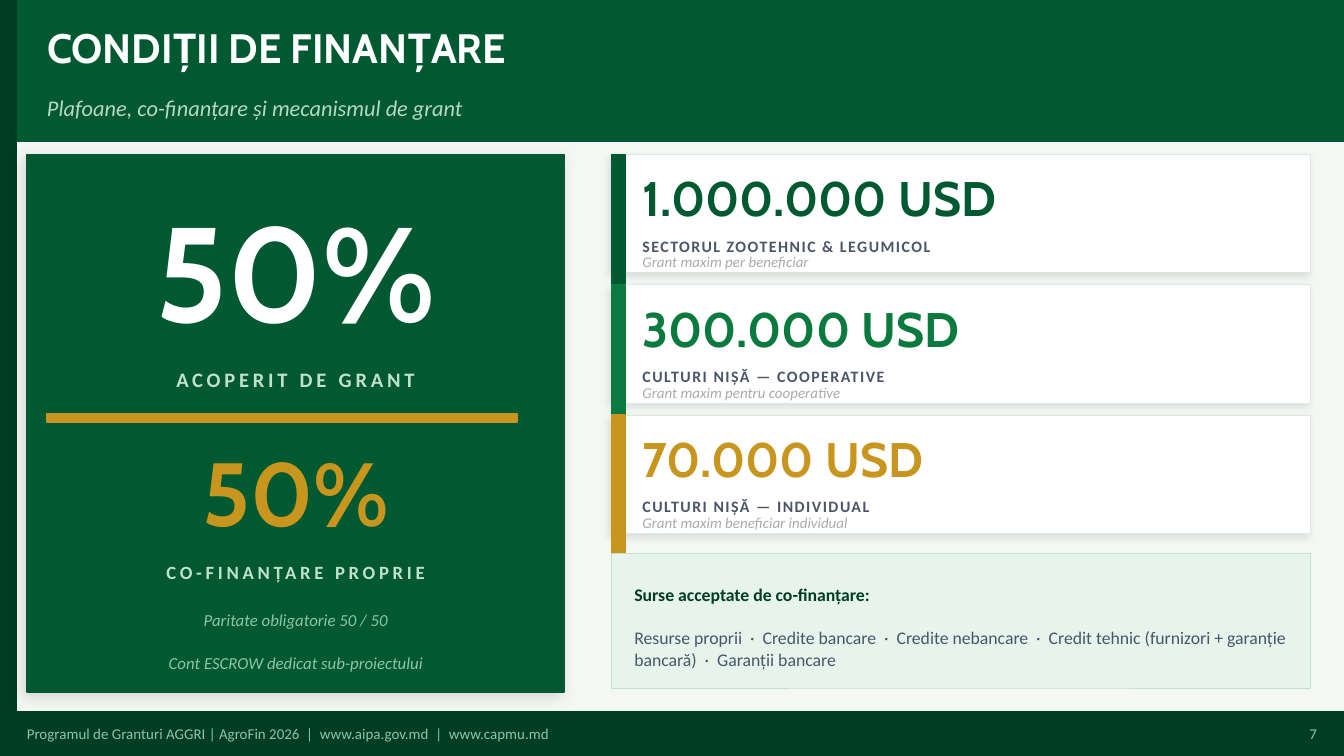
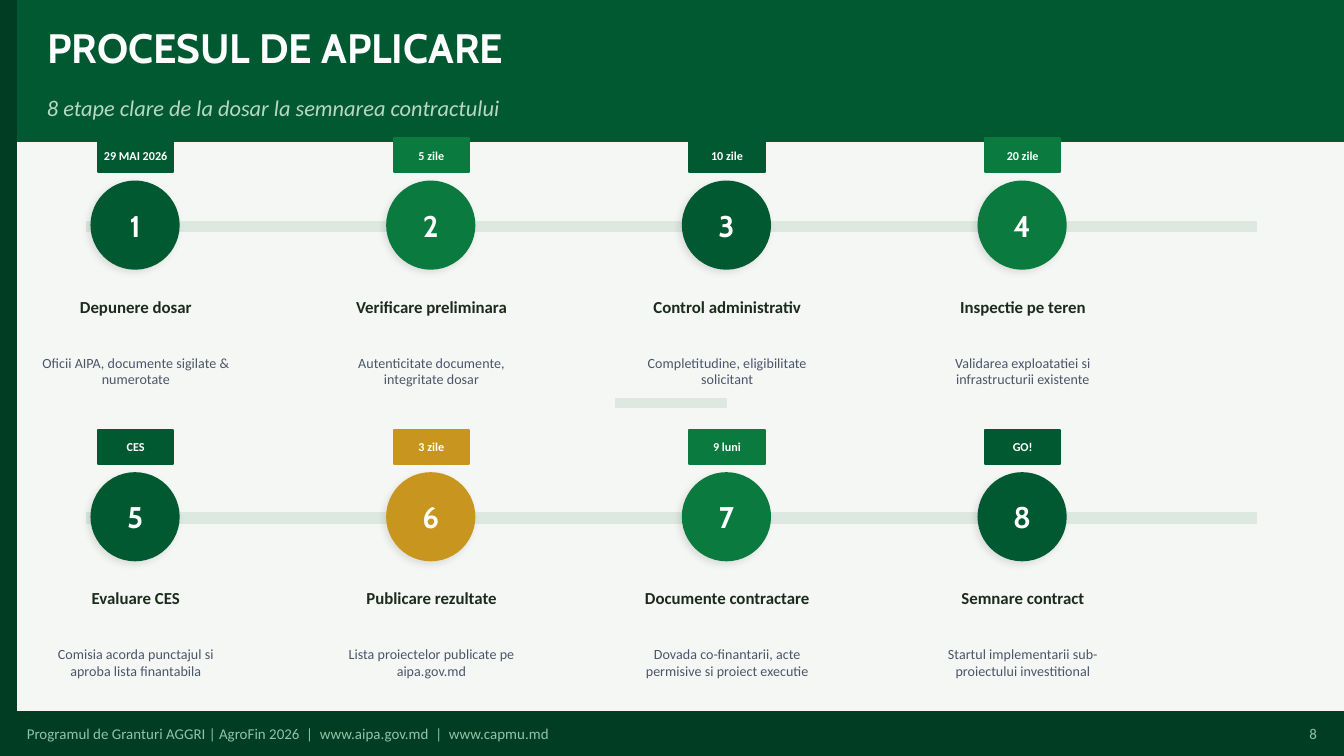
from lxml import etree
from pptx import Presentation
from pptx.dml.color import RGBColor
from pptx.enum.shapes import MSO_SHAPE
from pptx.enum.text import MSO_ANCHOR, MSO_AUTO_SIZE, PP_ALIGN
from pptx.oxml.ns import qn
from pptx.util import Inches, Pt

RECT, OVAL = MSO_SHAPE.RECTANGLE, MSO_SHAPE.OVAL
LEFT, CENTER, RIGHT = PP_ALIGN.LEFT, PP_ALIGN.CENTER, PP_ALIGN.RIGHT
MIDDLE = MSO_ANCHOR.MIDDLE
NO_AUTOFIT = MSO_AUTO_SIZE.NONE

# Shared palette and fonts
GREEN, DARK, LEAF, GOLD = "005931", "003D22", "0A7A3E", "C8961E"
WHITE, PAPER, TRACK, MINT = "FFFFFF", "F4F7F4", "DDE8E0", "C2E0CE"
PALE, SAGE, SLATE, GREY, INK = "B8D8C2", "90C4A8", "4A5568", "AAAAAA", "1C2B1C"
HEAD, BODY = "Cabin", "Calibri"

SLIDE_W = 10
SLIDE_H = SLIDE_W * 9 / 16
TITLE_ONLY = 5
FOOTER = "Programul de Granturi AGGRI | AgroFin 2026  |  www.aipa.gov.md  |  www.capmu.md"

CARDS = [
    ("1.000.000 USD", "SECTORUL ZOOTEHNIC & LEGUMICOL", "Grant maxim per beneficiar", GREEN),
    ("300.000 USD", "CULTURI NIȘĂ — COOPERATIVE", "Grant maxim pentru cooperative", LEAF),
    ("70.000 USD", "CULTURI NIȘĂ — INDIVIDUAL", "Grant maxim beneficiar individual", GOLD),
]
SOURCES = ("Resurse proprii  ·  Credite bancare  ·  Credite nebancare  ·  "
           "Credit tehnic (furnizori + garanție bancară)  ·  Garanții bancare")
STEPS = [
    ("29 MAI 2026", "Depunere dosar", "Oficii AIPA, documente sigilate & numerotate", GREEN),
    ("5 zile", "Verificare preliminara", "Autenticitate documente, integritate dosar", LEAF),
    ("10 zile", "Control administrativ", "Completitudine, eligibilitate solicitant", GREEN),
    ("20 zile", "Inspectie pe teren", "Validarea exploatatiei si infrastructurii existente", LEAF),
    ("CES", "Evaluare CES", "Comisia acorda punctajul si aproba lista finantabila", GREEN),
    ("3 zile", "Publicare rezultate", "Lista proiectelor publicate pe aipa.gov.md", GOLD),
    ("9 luni", "Documente contractare",
     "Dovada co-finantarii, acte permisive si proiect executie", LEAF),
    ("GO!", "Semnare contract", "Startul implementarii sub-proiectului investitional", GREEN),
]
STEPS_PER_ROW = 4


def rgb(color):
    return RGBColor.from_string(color)


def write(sp, text, size, color, font=BODY, bold=False, italic=False,
          align=LEFT, spacing=0):
    """Fill a shape with one paragraph, centred vertically and without insets."""
    tf = sp.text_frame
    tf.word_wrap = True
    tf.auto_size = NO_AUTOFIT
    tf.vertical_anchor = MIDDLE
    tf.margin_left = tf.margin_top = tf.margin_right = tf.margin_bottom = 0
    p = tf.paragraphs[0]
    p.text = text
    p.alignment = align
    f = p.font
    f.name, f.size, f.bold, f.italic = font, Pt(size), bold, italic
    f.color.rgb = rgb(color)
    if spacing:
        f._rPr.set("spc", str(round(spacing * 100)))


def add_text(s, x, y, w, h, text, size, color, **style):
    sp = s.shapes.add_textbox(Inches(x), Inches(y), Inches(w), Inches(h))
    write(sp, text, size, color, **style)


def add_block(s, x, y, w, h, fill, line=None, line_width=1, kind=RECT):
    sp = s.shapes.add_shape(kind, Inches(x), Inches(y), Inches(w), Inches(h))
    sp.shadow.inherit = False
    sp.fill.solid()
    sp.fill.fore_color.rgb = rgb(fill)
    sp.line.color.rgb = rgb(line or fill)
    sp.line.width = Pt(line_width)
    return sp


def cast_shadow(sp, opacity, blur, distance):
    """Soft black shadow towards the lower left."""
    effects = sp.element.spPr.find(qn("a:effectLst"))
    shadow = etree.SubElement(effects, qn("a:outerShdw"), blurRad=str(Pt(blur)),
                              dist=str(Pt(distance)), dir=str(135 * 60000),
                              algn="bl", rotWithShape="0")
    black = etree.SubElement(shadow, qn("a:srgbClr"), val="000000")
    etree.SubElement(black, qn("a:alpha"), val=str(opacity * 1000))


def add_slide(prs, number, title, subtitle):
    s = prs.slides.add_slide(prs.slide_layouts[TITLE_ONLY])
    # Header
    add_block(s, 0, 0, SLIDE_W, 1.05, GREEN)
    add_block(s, 0, 0, 0.12, SLIDE_H, DARK)
    sp = s.shapes.title
    sp.left, sp.top, sp.width, sp.height = (Inches(v) for v in (0.35, 0.1, 8.5, 0.5))
    write(sp, title, 22, WHITE, font=HEAD, bold=True)
    sp.element.getparent().append(sp.element)  # bring above the band
    add_text(s, 0.35, 0.62, 9, 0.36, subtitle, 12, PALE, italic=True)
    # Footer
    add_block(s, 0, 5.3, SLIDE_W, SLIDE_H - 5.3, DARK)
    add_text(s, 0.2, 5.31, 8.5, 0.3, FOOTER, 8, SAGE)
    add_text(s, 9.2, 5.31, 0.6, 0.3, str(number), 8, SAGE, align=RIGHT)
    return s


def split_panel(s, x, y, w, h):
    cast_shadow(add_block(s, x, y, w, h, GREEN), 12, 8, 3)
    add_block(s, x + 0.15, y + 1.93, w - 0.5, 0.06, GOLD)
    number = dict(font=HEAD, bold=True)
    label = dict(bold=True, spacing=2)
    note = dict(italic=True)
    rows = [
        (0.1, 0.15, 1.4, "50%", 72, WHITE, number),
        (0.1, 1.5, 0.35, "ACOPERIT DE GRANT", 11, MINT, label),
        (0.1, 2.05, 0.9, "50%", 48, GOLD, number),
        (0.1, 2.93, 0.35, "CO-FINANȚARE PROPRIE", 10, MINT, label),
        (0, 3.3, 0.32, "Paritate obligatorie 50 / 50", 9, SAGE, note),
        (0, 3.63, 0.3, "Cont ESCROW dedicat sub-proiectului", 9, SAGE, note),
    ]
    for inset, dy, height, text, size, color, style in rows:
        add_text(s, x + inset, y + dy, w - 2 * inset, height, text, size, color,
                 align=CENTER, **style)


def grant_card(s, x, y, w, h, amount, sector, note, color):
    cast_shadow(add_block(s, x, y, w, h, WHITE, TRACK, 0.5), 10, 4, 2)
    add_block(s, x, y, 0.1, 1.25, color)
    tx, tw = x + 0.23, w - 0.5
    add_text(s, tx, y + 0.06, tw, 0.52, amount, 26, color, font=HEAD, bold=True)
    add_text(s, tx, y + 0.58, tw, 0.2, sector, 8.5, SLATE, bold=True, spacing=0.8)
    add_text(s, tx, y + 0.72, tw, 0.16, note, 8, GREY, italic=True)


def sources_box(s, x, y, w, h):
    add_block(s, x, y, w, h, "E6F4EC", MINT, 0.5)
    tx, tw = x + 0.17, w - 0.2
    add_text(s, tx, y + 0.18, tw, 0.24, "Surse acceptate de co-finanțare:", 9.5, DARK, bold=True)
    add_text(s, tx, y + 0.43, tw, 0.55, SOURCES, 9.5, SLATE)


def step(s, x, y, w, number, timing, name, detail, color):
    """One stage: badge, numbered circle and two captions, in one column."""
    sp = add_block(s, x + 0.38, y + 0.32, 0.65, 0.65, color, kind=OVAL)
    cast_shadow(sp, 10, 4, 2)
    write(sp, str(number), 16, WHITE, font=HEAD, bold=True, align=CENTER)
    sp = add_block(s, x + 0.43, y, 0.56, 0.25, color)
    write(sp, timing, 6.5, WHITE, bold=True, align=CENTER)
    add_text(s, x, y + 1.04, w, 0.42, name, 9, INK, bold=True, align=CENTER)
    add_text(s, x, y + 1.47, w, 0.52, detail, 7.5, SLATE, align=CENTER)


def step_row(s, x, y, first, steps):
    add_block(s, x + 0.35, y + 0.62, 8.7, 0.07, TRACK)
    for i, (timing, name, detail, color) in enumerate(steps):
        step(s, x + i * 2.2, y, 1.42, first + i, timing, name, detail, color)


def funding_slide(prs):
    s = add_slide(prs, 7, "CONDIȚII DE FINANȚARE",
                  "Plafoane, co-finanțare și mecanismul de grant")
    split_panel(s, 0.2, 1.15, 4, 4)
    for i, card in enumerate(CARDS):
        grant_card(s, 4.55, 1.15 + i * 0.97, 5.2, 0.88, *card)
    sources_box(s, 4.55, 4.12, 5.2, 1)


def process_slide(prs):
    s = add_slide(prs, 8, "PROCESUL DE APLICARE",
                  "8 etape clare de la dosar la semnarea contractului")
    for row in range(len(STEPS) // STEPS_PER_ROW):
        start = row * STEPS_PER_ROW
        step_row(s, 0.3, 1.03 + row * 2.17, start + 1, STEPS[start:start + STEPS_PER_ROW])
    add_block(s, 4.58, 2.97, 0.82, 0.06, TRACK)  # link between the rows


def main():
    prs = Presentation()
    prs.slide_width, prs.slide_height = Inches(SLIDE_W), Inches(SLIDE_H)
    fill = prs.slide_master.background.fill
    fill.solid()
    fill.fore_color.rgb = rgb(PAPER)
    funding_slide(prs)
    process_slide(prs)
    prs.save("out.pptx")


if __name__ == "__main__":
    main()
